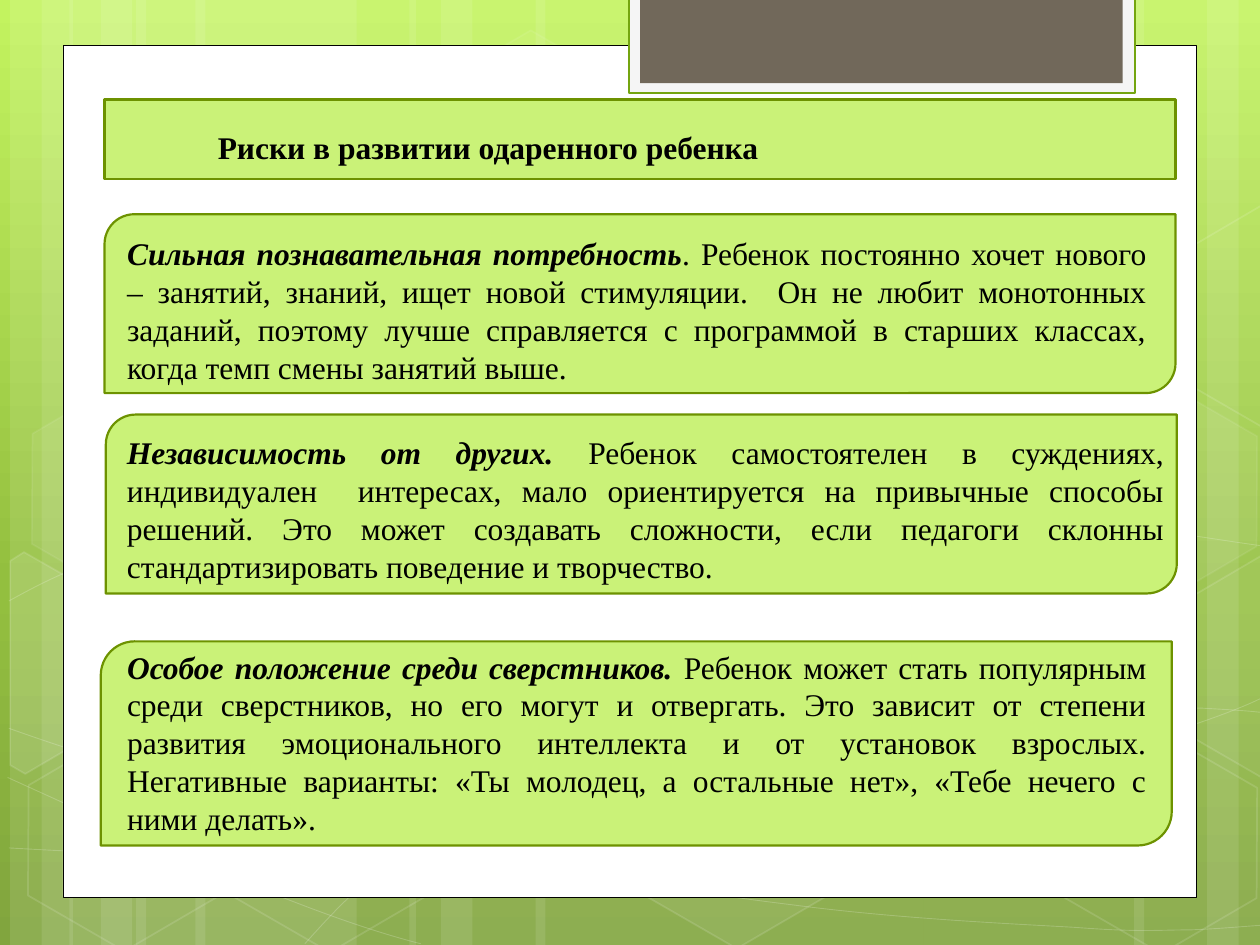
"""Build a slide on the risks in the development of a gifted child."""
from copy import deepcopy
from math import cos, radians, sin

from lxml.etree import SubElement
from pptx import Presentation
from pptx.dml.color import RGBColor
from pptx.enum.shapes import MSO_SHAPE
from pptx.enum.text import MSO_AUTO_SIZE, PP_ALIGN
from pptx.oxml.ns import qn
from pptx.util import Inches, Pt

WHITE = RGBColor(0xFF, 0xFF, 0xFF)
BLACK = RGBColor(0, 0, 0)
LIME = RGBColor(0xCA, 0xF2, 0x78)
OLIVE = RGBColor(0x6D, 0x92, 0x00)
TAB_FILL = RGBColor(0xF5, 0xF5, 0xF5)
TAB_LINE = RGBColor(0x74, 0xA5, 0x10)
BROWN = RGBColor(0x71, 0x68, 0x5A)
GRADIENT = [
    (0, RGBColor(0xC3, 0xF3, 0x5F)),
    (0.62, RGBColor(0x93, 0xBF, 0x3F)),
    (1, RGBColor(0x81, 0xA5, 0x3E)),
]
FONT = "Times New Roman"
TILT = 30

TITLE = "Риски в развитии одаренного ребенка"
RISKS = [
    {
        "card": (0.83, 1.7, 8.5, 1.42),
        "box": (0.91, 1.81, 8.29, 1.31),
        "lead": "Сильная познавательная потребность",
        "body": ". Ребенок постоянно хочет нового – занятий, знаний, ищет новой "
                "стимуляции.  Он не любит монотонных заданий, поэтому лучше справляется "
                "с программой в старших классах, когда темп смены занятий выше.",
    },
    {
        "card": (0.84, 3.29, 8.5, 1.42),
        "box": (0.91, 3.39, 8.43, 1.31),
        "lead": "Независимость от других.",
        "body": " Ребенок самостоятелен в суждениях, индивидуален  интересах, мало "
                "ориентируется на привычные способы решений. Это может создавать "
                "сложности, если педагоги склонны стандартизировать поведение и творчество.",
    },
    {
        "card": (0.8, 5.09, 8.5, 1.62),
        "box": (0.91, 5.09, 8.29, 1.62),
        "lead": "Особое положение среди сверстников. ",
        "body": "Ребенок может стать популярным среди сверстников, но его могут и "
                "отвергать. Это зависит от степени развития эмоционального интеллекта и "
                "от установок взрослых. Негативные варианты: «Ты молодец, а остальные "
                "нет», «Тебе нечего с ними делать».",
    },
]

BANDS = [
    (1.08, 1.75, 0), (0.08, 0.5, 0), (0.33, 0.83, 0), (1.55, 1.75, 0), (0.55, 0.5, 0),
    (0.8, 0.83, 0), (7.33, 1.75, 180), (9.58, 0.5, 180), (9, 0.83, 180), (4.25, 3.08, 0),
    (3.25, 0.5, 0), (3.5, 0.83, 0),
]
CURVES = [
    ([(0.07, 6.73), (0.61, 6.76), (1.15, 6.79), (1.9, 6.78), (2.65, 6.77), (3.58, 6.75),
      (4.58, 6.65), (5.58, 6.55), (7, 6.36), (7.92, 6.17), (8.83, 5.98), (9.77, 5.68),
      (10.07, 5.51)], None),
    ([(0.07, 4.77), (0.36, 4.61), (0.65, 4.46), (1.21, 4.31), (1.78, 4.16), (2.59, 3.94),
      (3.47, 3.87), (4.36, 3.8), (5.44, 3.79), (6.54, 3.87), (7.64, 3.95), (9.47, 4.26),
      (10.07, 4.34)], None),
    ([(0.06, 6.17), (1.27, 6.72), (2.47, 7.27), (3.34, 7.49)], None),
    ([(0.07, 5.78), (0.38, 5.89), (0.7, 6), (1.28, 6.16), (1.86, 6.31), (2.73, 6.56),
      (3.57, 6.73), (4.4, 6.9), (5.45, 7.08), (6.28, 7.18), (7.11, 7.29), (8, 7.33),
      (8.53, 7.36), (9.05, 7.4), (9.19, 7.38), (9.45, 7.38), (9.71, 7.37), (9.89, 7.35),
      (10.07, 7.34)], None),
    ([(2.42, 7.49), (2.6, 7.29), (2.78, 7.09), (3.02, 6.91), (3.26, 6.73), (3.6, 6.53),
      (3.88, 6.39), (4.16, 6.25), (4.33, 6.19), (4.7, 6.09), (5.06, 5.99), (5.73, 5.85),
      (6.08, 5.78), (6.44, 5.71), (6.49, 5.71), (6.8, 5.69), (7.11, 5.66), (7.6, 5.63),
      (7.94, 5.62), (8.29, 5.61), (8.86, 5.62), (8.86, 5.62), (9.53, 5.62), (9.71, 5.63),
      (9.88, 5.64), (9.97, 5.65), (10.06, 5.66), (10.03, 5.65), (10.06, 5.66)], 21),
]
HEXAGONS = [
    (3.34, 0.36, 4, 8), (4.97, 5.89, 6, 12), (0.11, 5.91, 0, 12), (0.14, 3.12, 7, 8),
    (1.74, 5.92, 0, 12), (7.53, 4.53, 10, 12), (8.34, 5.93, 0, 12), (8.34, 3.14, 7, 8),
]
CUT_HEXAGONS = [
    ((0.36, 5.35), 10, [(0.08, 4.45), (0.19, 4.38), (0.96, 4.82), (0.95, 5.7), (0.2, 6.14),
                        (0.08, 6.07)]),
    ((9.85, 5.2), 4, [(9.26, 4.85), (10.01, 4.41), (10.09, 4.46), (10.09, 6.13),
                      (10.02, 6.17), (9.26, 5.73)]),
    ((9.85, 2.41), 0, [(9.26, 2.07), (10.01, 1.63), (10.1, 1.68), (10.09, 3.35),
                       (10.02, 3.39), (9.26, 2.95)]),
]


def set_opacity(fill_format, color, opacity):
    fill_format.solid()
    fill_format.fore_color.rgb = color
    if opacity < 100:
        color_element = fill_format._xPr.find(qn("a:solidFill"))[0]
        SubElement(color_element, qn("a:alpha"), val=str(opacity * 1000))


def style(shape, fill=None, opacity=100, line=None, width=1, line_opacity=100):
    shape.shadow.inherit = False
    if fill is None or opacity == 0:
        shape.fill.background()
    else:
        set_opacity(shape.fill, fill, opacity)
    if line is None:
        shape.line.fill.background()
    else:
        shape.line.width = Pt(width)
        set_opacity(shape.line.fill, line, line_opacity)


def add_block(slide, bounds, preset=MSO_SHAPE.RECTANGLE, rotation=0, **look):
    shape = slide.shapes.add_shape(preset, *map(Inches, bounds))
    shape.rotation = rotation
    style(shape, **look)
    return shape


def add_outline(slide, points, close, **look):
    corners = [(Inches(x), Inches(y)) for x, y in points]
    builder = slide.shapes.build_freeform(*corners[0])
    builder.add_line_segments(corners[1:], close=close)
    shape = builder.convert_to_shape()
    style(shape, **look)
    return shape


def bend(shape, straight):
    lines = list(shape._element.iter(qn("a:lnTo")))
    if straight is not None:
        lines.pop(straight)
    for start in range(0, len(lines), 3):
        group = lines[start:start + 3]
        curve = group[0].makeelement(qn("a:cubicBezTo"))
        group[0].addprevious(curve)
        for line in group:
            curve.append(line[0])
            line.getparent().remove(line)


def turn_back(point, center):
    angle = radians(-TILT)
    x, y = point[0] - center[0], point[1] - center[1]
    return (center[0] + x * cos(angle) - y * sin(angle),
            center[1] + x * sin(angle) + y * cos(angle))


def add_text(slide, bounds, lead, body="", italic=None, align=None):
    frame = slide.shapes.add_textbox(*map(Inches, bounds)).text_frame
    frame.word_wrap = True
    frame.auto_size = MSO_AUTO_SIZE.SHAPE_TO_FIT_TEXT
    paragraph = frame.paragraphs[0]
    paragraph.alignment = align
    for text, emphasis in ((lead, True), (body, False)):
        if text:
            run = paragraph.add_run()
            run.text = text
            run.font.name, run.font.size = FONT, Pt(18)
            run.font.bold, run.font.italic = emphasis, emphasis and italic
            run.font.color.rgb = BLACK


def paint_background(slide):
    fill = slide.background.fill
    fill.gradient()
    fill.gradient_angle = 270
    first = fill._fill._gradFill.find(qn("a:gsLst"))[0]
    first.addnext(deepcopy(first))
    for stop, (position, color) in zip(fill.gradient_stops, GRADIENT):
        stop.position, stop.color.rgb = position, color


def add_decor(slide):
    for left, width, rotation in BANDS:
        add_block(slide, (left, 0, width, 7.5), rotation=rotation, fill=WHITE, opacity=10)
    for points, straight in CURVES:
        bend(add_outline(slide, points, False, line=WHITE, width=0.5, line_opacity=20), straight)
    for left, top, opacity, line_opacity in HEXAGONS:
        hexagon = add_block(slide, (left, top, 1.75, 1.52), MSO_SHAPE.HEXAGON, TILT, fill=WHITE,
                            opacity=opacity, line=WHITE, line_opacity=line_opacity)
        hexagon.adjustments[0] = 0.285
    for center, opacity, points in CUT_HEXAGONS:
        add_outline(slide, [turn_back(point, center) for point in points], True, fill=WHITE,
                    opacity=opacity, line=WHITE, line_opacity=12).rotation = TILT
    add_block(slide, (0.5, 0.36, 9, 6.76), fill=WHITE, line=BLACK, width=0.5)
    add_block(slide, (4.99, -0.02, 4.02, 0.76), fill=TAB_FILL, line=TAB_LINE, width=1.25)
    add_block(slide, (5.08, -0.02, 3.83, 0.68), fill=BROWN)


def main():
    presentation = Presentation()
    presentation.slide_width, presentation.slide_height = Inches(10), Inches(7.5)
    slide = presentation.slides.add_slide(presentation.slide_layouts[6])
    paint_background(slide)
    add_decor(slide)
    card_look = {"fill": LIME, "line": OLIVE, "width": 1.25}
    add_block(slide, (0.83, 0.79, 8.5, 0.63), **card_look)
    add_text(slide, (1.63, 0.97, 5.91, 0.4), TITLE)
    for risk in RISKS:
        add_block(slide, risk["card"], MSO_SHAPE.ROUND_2_DIAG_RECTANGLE, **card_look)
        add_text(slide, risk["box"], risk["lead"], risk["body"], True, PP_ALIGN.JUSTIFY)
    presentation.save("out.pptx")


if __name__ == "__main__":
    main()
